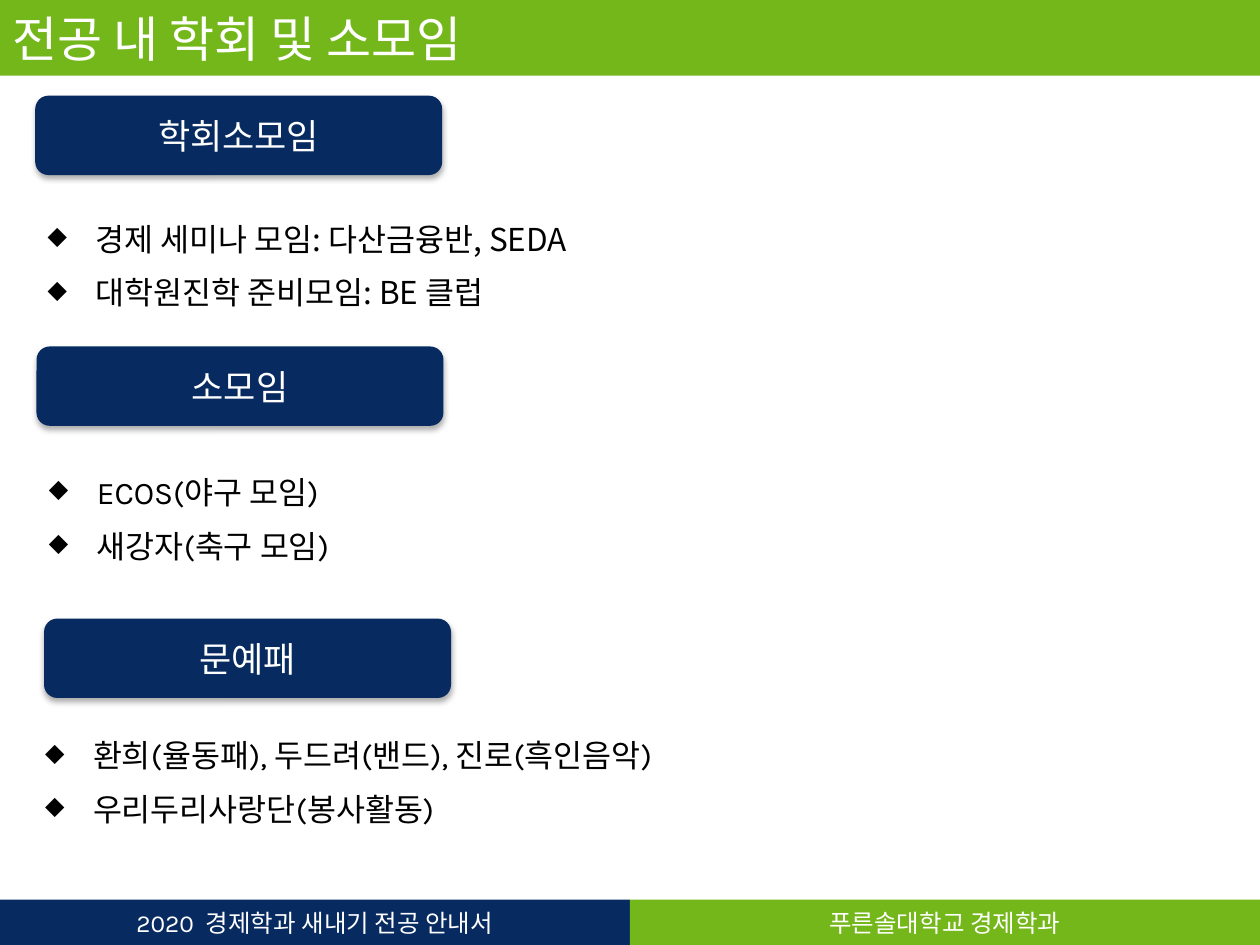
from lxml import etree
from pptx import Presentation
from pptx import util as u
from pptx.dml.color import RGBColor
from pptx.enum import shapes, text
from pptx.oxml.ns import qn

COLORS = {"navy": "072A60", "green": "74B71A", "white": "FFFFFF",
          "black": "000000"}
LATIN, HANGUL = "Karla", "Noto Sans CJK KR"
HEADING_SIZE = (3.23, 0.63)


def add_run(para, words, size, color, font=LATIN):
    span = para.add_run()
    span.text = words
    span.font.size = u.Pt(size)
    span.font.color.rgb = RGBColor.from_string(COLORS[color])
    span.font.name = font
    east_asian = etree.SubElement(span.font._element, qn("a:ea"))
    east_asian.set("typeface", HANGUL)


def add_panel(page, box, fill, words, size, font=LATIN,
              kind=shapes.MSO_SHAPE.RECTANGLE,
              align=text.PP_ALIGN.CENTER):
    panel = page.shapes.add_shape(kind, *map(u.Inches, box))
    panel.shadow.inherit = False
    panel.fill.solid()
    panel.fill.fore_color.rgb = RGBColor.from_string(COLORS[fill])
    panel.line.fill.background()
    panel.text_frame.vertical_anchor = text.MSO_ANCHOR.MIDDLE
    para = panel.text_frame.paragraphs[0]
    para.alignment = align
    add_run(para, words, size, "white", font)
    return panel


def add_shadow(panel):
    effects = panel._element.spPr.find(qn("a:effectLst"))
    shadow = etree.SubElement(effects, qn("a:outerShdw"),
                              blurRad=str(u.Pt(3.5)), dist=str(u.Pt(2.2)),
                              dir="5400000", rotWithShape="0")
    color = etree.SubElement(shadow, qn("a:srgbClr"), val=COLORS["black"])
    etree.SubElement(color, qn("a:alpha"), val="32000")


def add_heading(page, left, top, words):
    panel = add_panel(page, (left, top, *HEADING_SIZE), "navy", words, 20,
                      kind=shapes.MSO_SHAPE.ROUNDED_RECTANGLE)
    add_shadow(panel)


def add_bullets(page, box, items, font):
    frame = page.shapes.add_textbox(*map(u.Inches, box)).text_frame
    frame.word_wrap = True
    for number, item in enumerate(items):
        para = frame.add_paragraph() if number else frame.paragraphs[0]
        para.alignment = text.PP_ALIGN.JUSTIFY
        para.line_spacing = u.Pt(27)
        para.space_before = u.Pt(3.6)
        # Hanging diamond bullet
        props = para._p.get_or_add_pPr()
        props.set("marL", str(u.Inches(0.38)))
        props.set("indent", str(u.Inches(-0.38)))
        etree.SubElement(props, qn("a:buSzPct"), val="80000")
        etree.SubElement(props, qn("a:buChar"), char="◆")
        add_run(para, item, 18, "black", font)


def add_footer(page, box):
    left, top, width, height = box
    labels = [("navy", "2020  경제학과 새내기 전공 안내서"),
              ("green", "푸른솔대학교 경제학과")]
    half = width / len(labels)
    for number, (fill, words) in enumerate(labels):
        add_panel(page, (left + number * half, top, half, height),
                  fill, words, 14)


def main():
    deck = Presentation()
    deck.slide_width, deck.slide_height = u.Inches(10), u.Inches(7.5)
    page = deck.slides.add_slide(deck.slide_layouts[6])

    # Title band and footer
    add_footer(page, (0, 7.14, 10, 0.36))
    add_panel(page, (0, 0, 10, 0.6), "green", "전공 내 학회 및 소모임", 28,
              font=HANGUL, align=text.PP_ALIGN.LEFT)

    # Sections: heading, its position, list box, list font, items
    sections = [
        ("학회소모임", (0.28, 0.76), (0.28, 1.62, 9.45, 1.04), HANGUL,
         ["경제 세미나 모임: 다산금융반, SEDA", "대학원진학 준비모임: BE 클럽"]),
        ("소모임", (0.29, 2.75), (0.29, 3.63, 9.45, 1.1), LATIN,
         ["ECOS(야구 모임)", "새강자(축구 모임)"]),
        ("문예패", (0.35, 4.91), (0.26, 5.72, 9.45, 1.18), LATIN,
         ["환희(율동패), 두드려(밴드), 진로(흑인음악)",
          "우리두리사랑단(봉사활동)"]),
    ]
    for words, corner, list_box, font, items in sections:
        add_heading(page, *corner, words)
        add_bullets(page, list_box, items, font)

    deck.save("out.pptx")


if __name__ == "__main__":
    main()
